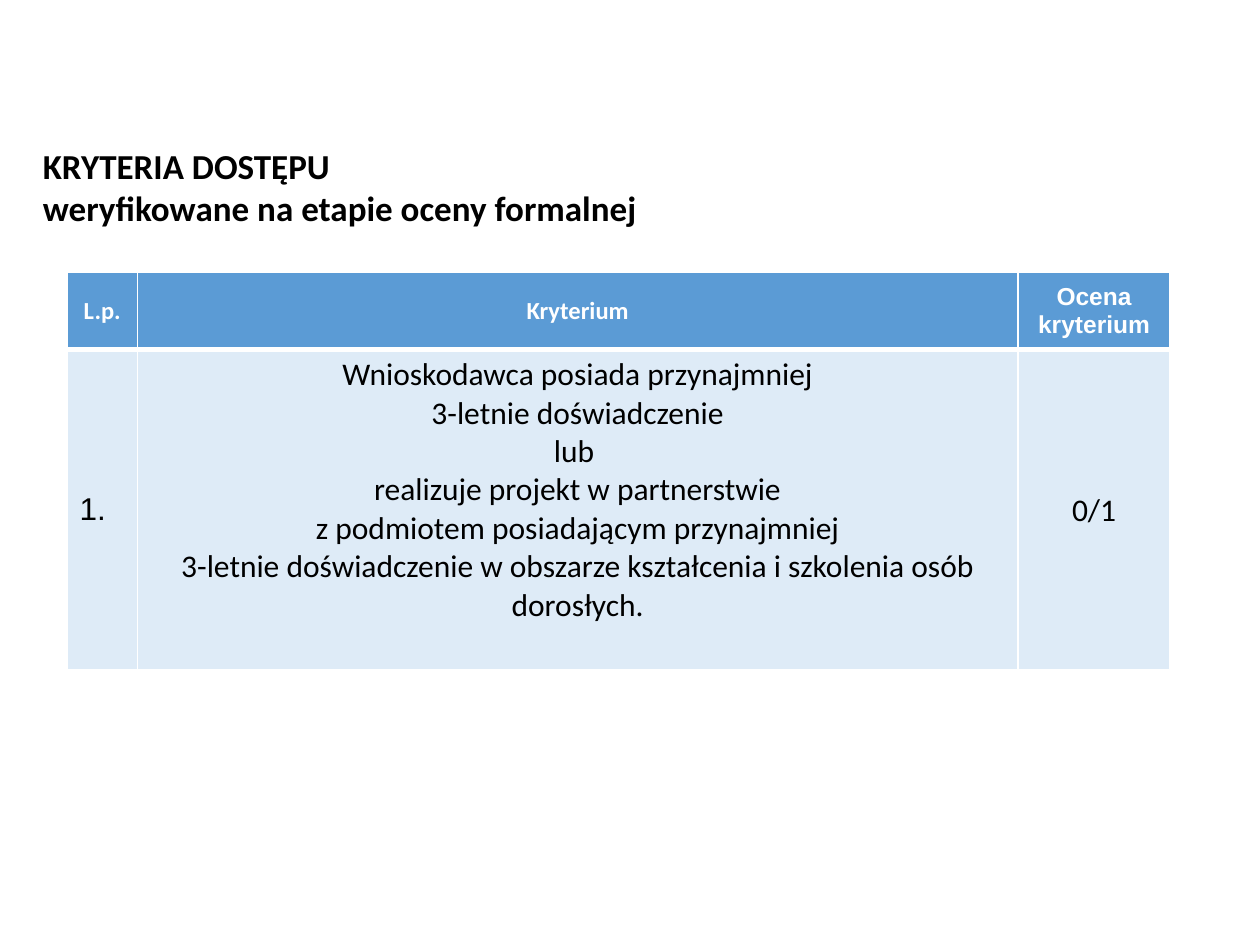
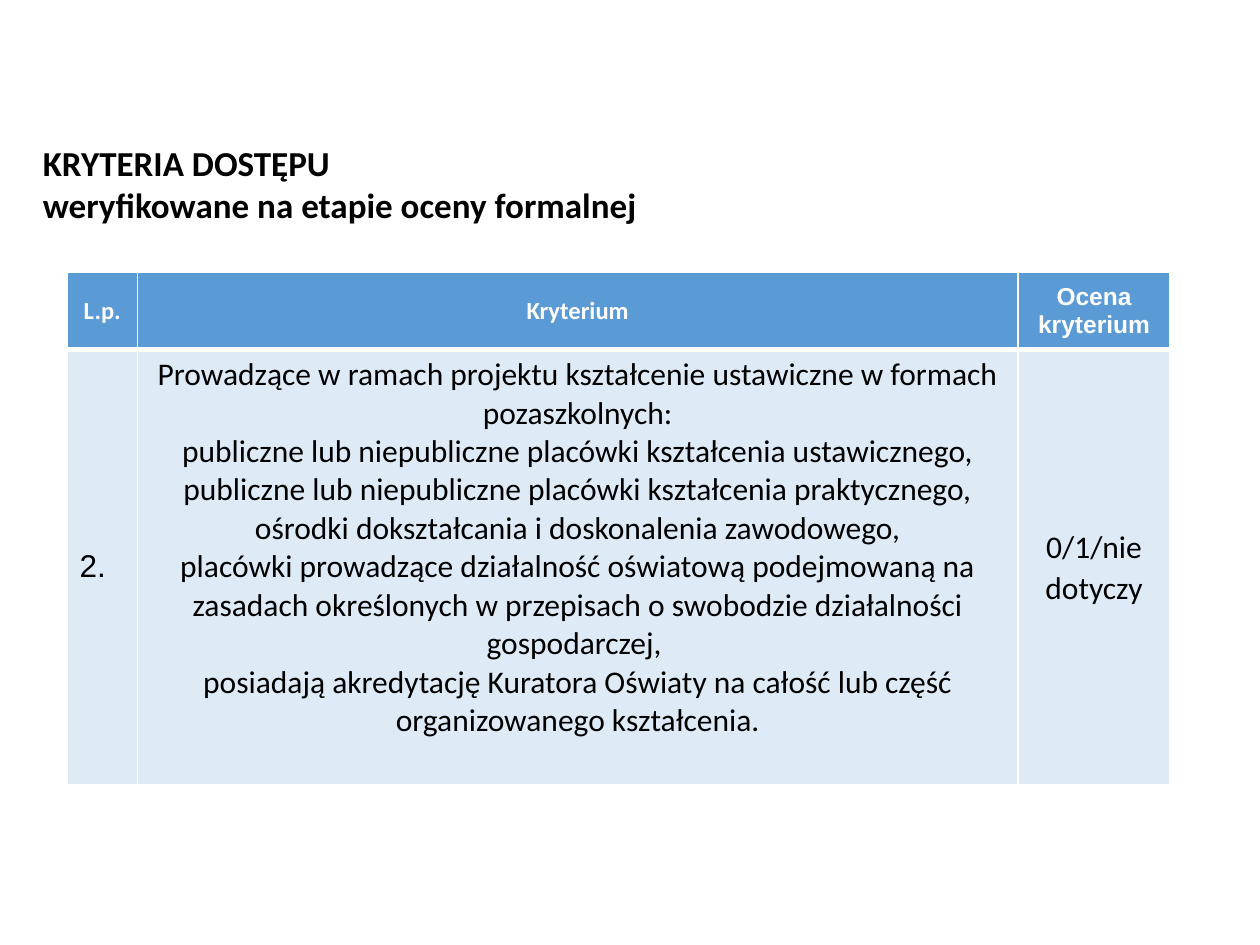
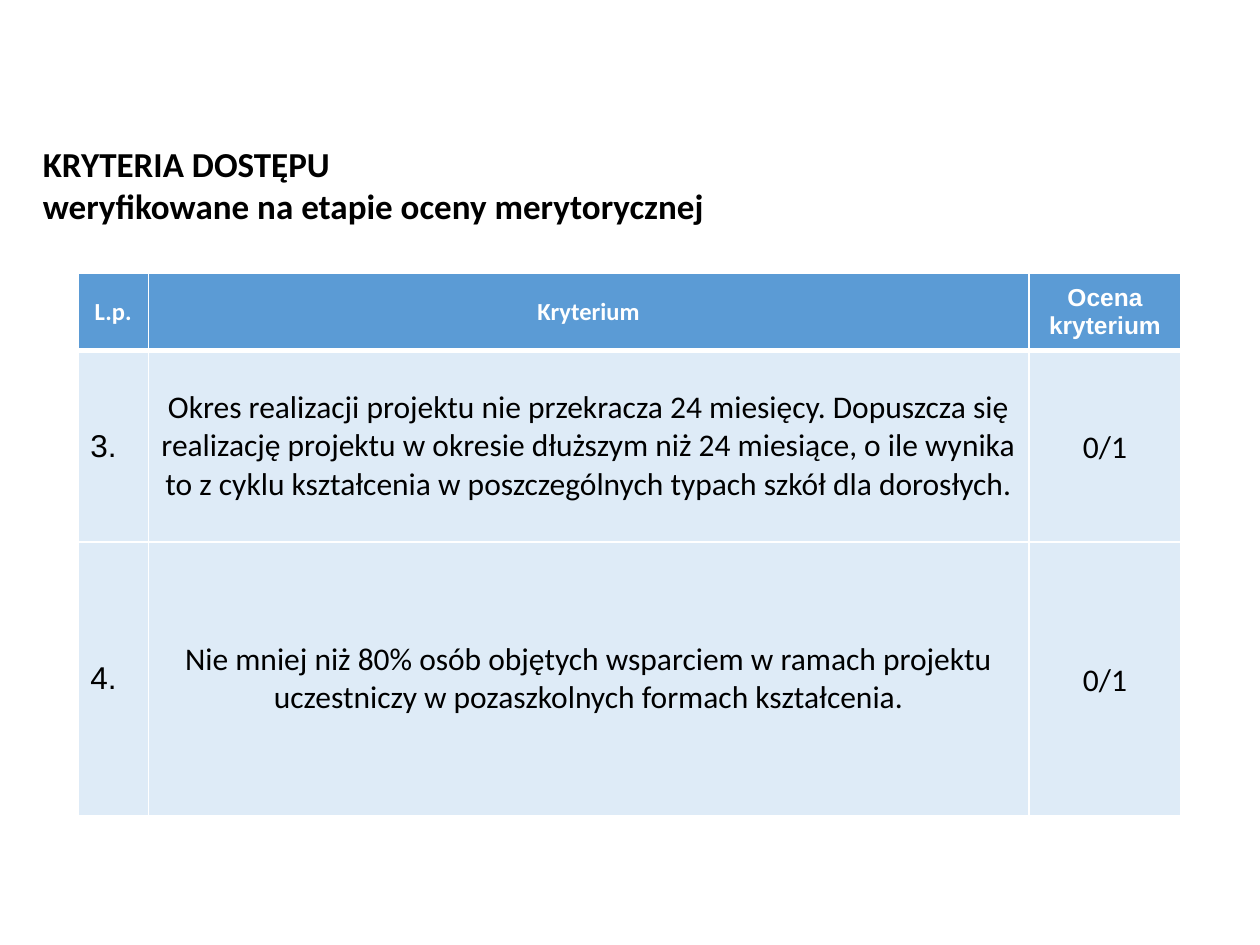
from lxml import etree
from pptx import Presentation
from pptx import util as u
from pptx.dml.color import RGBColor
from pptx.enum import text
from pptx.oxml.ns import qn

BLACK = RGBColor(0x00, 0x00, 0x00)
WHITE = RGBColor(0xFF, 0xFF, 0xFF)
HEADER_BLUE = RGBColor(0x5B, 0x9B, 0xD5)
ROW_BLUE = RGBColor(0xDE, 0xEB, 0xF7)

BODY_FONT = "Calibri"
ACCENT_FONT = "Arial"
COLUMN_WIDTHS = (1.42, 17.75, 3.07)
HEADER_HEIGHT = 1.55
HEADERS = (("L.p.", BODY_FONT), ("Kryterium", BODY_FONT), ("Ocena kryterium", ACCENT_FONT))
LEFT, CENTER = text.PP_ALIGN.LEFT, text.PP_ALIGN.CENTER


class CriteriaDeck:
    def __init__(self):
        self.prs = Presentation()
        self.prs.slide_width, self.prs.slide_height = u.Cm(25.4), u.Cm(19.05)
        self.slide = None

    def new_slide(self):
        self.slide = self.prs.slides.add_slide(self.prs.slide_layouts[5])

    def set_lines(self, frame, lines, font, size, color, bold=False, align=CENTER, spacing=None):
        frame.text = "\n".join(lines)
        for paragraph in frame.paragraphs:
            paragraph.alignment = align
            paragraph.line_spacing = spacing
            paragraph.font.name = font
            paragraph.font.size = u.Pt(size)
            paragraph.font.bold = bold
            paragraph.font.color.rgb = color

    def title(self, stage, top):
        heading = self.slide.shapes.title
        heading.left, heading.top = u.Cm(0.61), u.Cm(top)
        heading.width, heading.height = u.Cm(23.19), u.Cm(1.96)
        lines = ("KRYTERIA DOSTĘPU", f"weryfikowane na etapie oceny {stage}")
        self.set_lines(heading.text_frame, lines, BODY_FONT, 20, BLACK, bold=True, align=LEFT)
        heading.text_frame.vertical_anchor = text.MSO_ANCHOR.MIDDLE
        heading.text_frame.auto_size = text.MSO_AUTO_SIZE.NONE

    def paint(self, cell, fill, bottom_width=1):
        cell.fill.solid()
        cell.fill.fore_color.rgb = fill
        properties = cell._tc.get_or_add_tcPr()
        edges = (("L", 1), ("R", 1), ("T", 1), ("B", bottom_width))
        for place, (side, width) in enumerate(edges):
            line = etree.Element(qn(f"a:ln{side}"), w=str(u.Pt(width)))
            solid = etree.SubElement(line, qn("a:solidFill"))
            etree.SubElement(solid, qn("a:srgbClr"), val=str(WHITE))
            properties.insert(place, line)

    def fill_cell(self, cell, lines, *style, **options):
        self.set_lines(cell.text_frame, lines, *style, **options)
        cell.vertical_anchor = text.MSO_ANCHOR.MIDDLE

    def criteria_table(self, left, top, criteria, heights, bottom_margin=0.13):
        table = self.slide.shapes.add_table(
            len(criteria) + 1, len(COLUMN_WIDTHS), u.Cm(left), u.Cm(top),
            u.Cm(sum(COLUMN_WIDTHS)), u.Cm(HEADER_HEIGHT + sum(heights))).table
        table.horz_banding = False
        for column, width in zip(table.columns, COLUMN_WIDTHS):
            column.width = u.Cm(width)
        for row, height in zip(table.rows, (HEADER_HEIGHT, *heights)):
            row.height = u.Cm(height)

        for cell, (label, font) in zip(table.rows[0].cells, HEADERS):
            self.paint(cell, HEADER_BLUE, bottom_width=3)
            self.fill_cell(cell, [label], font, 14, WHITE, bold=True)

        for row_number, (number, criterion, score) in enumerate(criteria, 1):
            number_cell, criterion_cell, score_cell = table.rows[row_number].cells
            top_width_cells = (number_cell, criterion_cell, score_cell)
            for cell in top_width_cells:
                self.paint(cell, ROW_BLUE)
            self.fill_cell(number_cell, [number], ACCENT_FONT, 18, BLACK, align=LEFT)
            self.fill_cell(criterion_cell, criterion, BODY_FONT, 18, BLACK)
            criterion_cell.margin_bottom = u.Cm(bottom_margin)
            self.fill_cell(score_cell, [score], BODY_FONT, 18, BLACK, spacing=1.07)
            score_cell.margin_left = score_cell.margin_right = u.Cm(0.1)
            score_cell.margin_top = score_cell.margin_bottom = u.Cm(0.1)

    def save(self):
        self.prs.save("out.pptx")


EXPERIENCE = (
    "Wnioskodawca posiada przynajmniej",
    "3-letnie doświadczenie",
    "lub ",
    "realizuje projekt w partnerstwie",
    "z podmiotem posiadającym przynajmniej",
    "3-letnie doświadczenie w obszarze kształcenia i szkolenia osób dorosłych.",
)
ACCREDITATION = (
    "Prowadzące w ramach projektu kształcenie ustawiczne w formach pozaszkolnych:",
    "publiczne lub niepubliczne placówki kształcenia ustawicznego,",
    "publiczne lub niepubliczne placówki kształcenia praktycznego,",
    "ośrodki dokształcania i doskonalenia zawodowego,",
    "placówki prowadzące działalność oświatową podejmowaną na zasadach określonych "
    "w przepisach o swobodzie działalności gospodarczej, ",
    "posiadają akredytację Kuratora Oświaty na całość lub część organizowanego kształcenia.",
)
DURATION = (
    "Okres realizacji projektu nie przekracza 24 miesięcy. Dopuszcza się realizację projektu "
    "w okresie dłuższym niż 24 miesiące, o ile wynika to z cyklu kształcenia "
    "w poszczególnych typach szkół dla dorosłych.",
)
PARTICIPATION = (
    "Nie mniej niż 80% osób objętych wsparciem w ramach projektu uczestniczy "
    "w pozaszkolnych formach kształcenia.",
)


def main():
    deck = CriteriaDeck()

    deck.new_slide()
    deck.criteria_table(1.35, 5.49, [("1.", EXPERIENCE, "0/1")], [6.44], bottom_margin=0.9)
    deck.title("formalnej", 2.77)

    deck.new_slide()
    deck.criteria_table(1.35, 5.49, [("2.", ACCREDITATION, "0/1/nie dotyczy")], [8.76],
                        bottom_margin=0.9)
    deck.title("formalnej", 2.72)

    deck.new_slide()
    deck.criteria_table(1.57, 5.51, [("3.", DURATION, "0/1"), ("4.", PARTICIPATION, "0/1")],
                        [3.87, 5.51])
    deck.title("merytorycznej", 2.74)

    deck.save()


if __name__ == "__main__":
    main()
